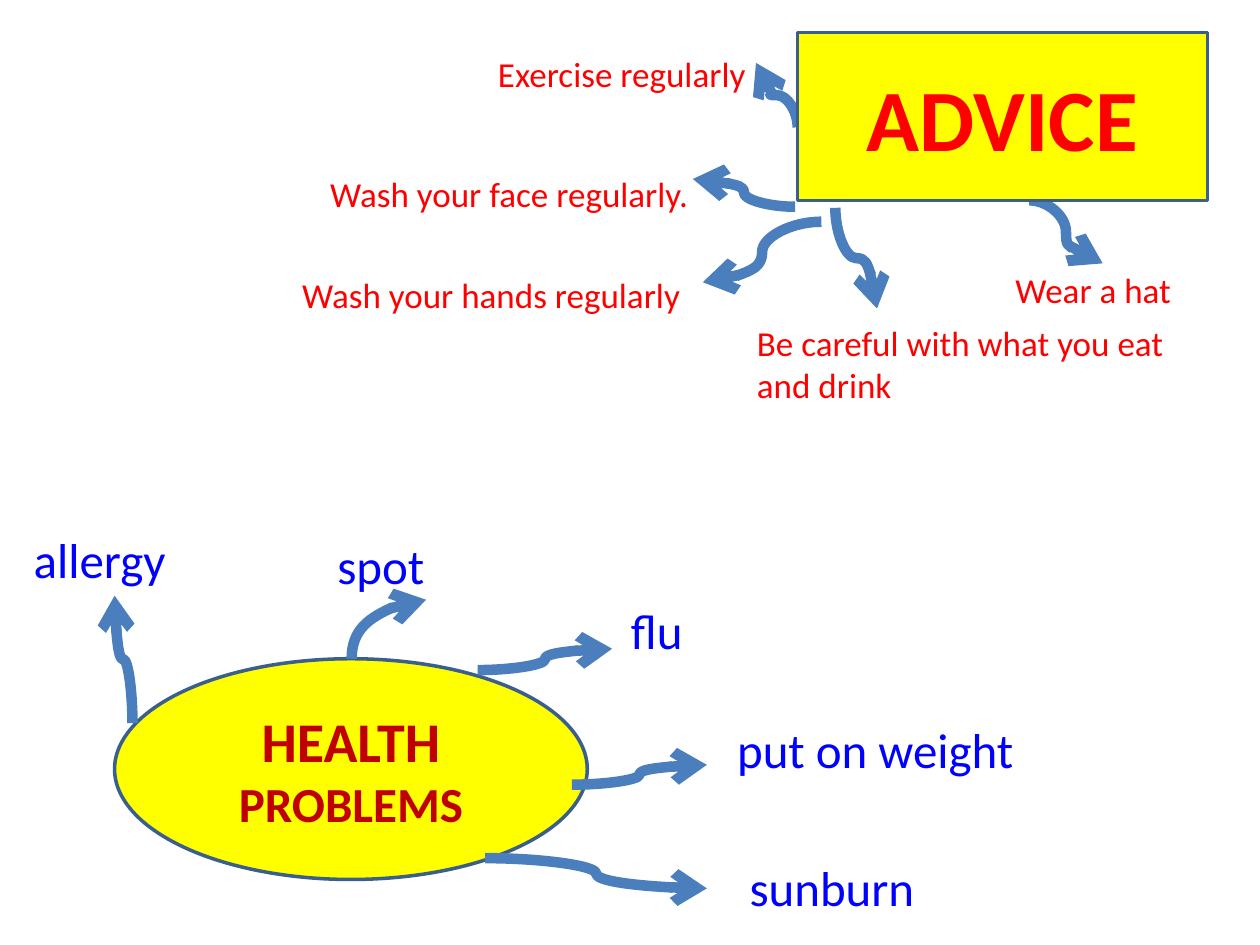
from lxml import etree
from pptx import Presentation
from pptx import util as u
from pptx.dml.color import RGBColor
from pptx.enum import shapes, text
from pptx.oxml.ns import qn


def color(value):
    return RGBColor.from_string(value)


def add_arrow(page, x1, y1, x2, y2, course):
    if course != "across":
        mid_x, mid_y = (x1 + x2) / 2, (y1 + y2) / 2
        half_x, half_y = (x2 - x1) / 2, (y2 - y1) / 2
        x1, x2 = mid_x + half_y, mid_x - half_y
        y1, y2 = mid_y - half_x, mid_y + half_x
    arrow = page.shapes.add_connector(
        shapes.MSO_CONNECTOR.CURVE, u.Cm(x1), u.Cm(y1), u.Cm(x2), u.Cm(y2))
    arrow.line.color.rgb = color("4B7EBC")
    arrow.line.width = u.Pt(6)
    properties = arrow.element.spPr
    if course != "across":
        properties.find(qn("a:xfrm")).set("rot", str(270 * 60000))
    if course == "corner":
        properties.find(qn("a:prstGeom")).set("prst", "curvedConnector2")
    etree.SubElement(properties.find(qn("a:ln")), qn("a:tailEnd"), type="arrow")
    etree.SubElement(properties, qn("a:effectLst"))


deck = Presentation()
deck.slide_width, deck.slide_height = u.Cm(25.4), u.Cm(19.05)
page = deck.slides.add_slide(deck.slide_layouts[6])

advice_arrows = [
    (20.75, 4.04, 22.23, 5.31, "across"),
    (16.08, 2.57, 15.24, 1.27, "upright"),
    (16.03, 4.17, 13.97, 3.61, "across"),
    (16.56, 4.47, 14.17, 5.69, "across"),
    (16.84, 4.19, 17.68, 6.22, "upright"),
]
for arrow in advice_arrows:
    add_arrow(page, *arrow)

topics = [
    (shapes.MSO_SHAPE.RECTANGLE, 16.08, 0.66, 8.26, 3.38, "FF0000", [("ADVICE", 50)]),
    (shapes.MSO_SHAPE.OVAL, 2.31, 13.28, 9.53, 4.45, "C00000",
     [("HEALTH ", 32), ("PROBLEMS", 28)]),
]
for kind, left, top, width, height, ink, words in topics:
    topic = page.shapes.add_shape(kind, u.Cm(left), u.Cm(top), u.Cm(width), u.Cm(height))
    topic.shadow.inherit = False
    topic.fill.solid()
    topic.fill.fore_color.rgb = color("FFFF00")
    topic.line.color.rgb = color("3A5F8C")
    topic.line.width = u.Pt(2)
    topic.text_frame.word_wrap = True
    topic.text_frame.vertical_anchor = text.MSO_ANCHOR.MIDDLE
    para = topic.text_frame.paragraphs[0]
    para.alignment = text.PP_ALIGN.CENTER
    for word, size in words:
        span = para.add_run()
        span.text = word
        span.font.name = "Calibri"
        span.font.size = u.Pt(size)
        span.font.bold = True
        span.font.color.rgb = color(ink)

left_side, centre = text.PP_ALIGN.LEFT, text.PP_ALIGN.CENTER
advice = [
    ("Wear a hat", 20.22, 5.28, 3.68, 1.12, False, left_side),
    ("Wash your hands regularly", 5.84, 5.38, 8.2, 1.12, False, left_side),
    ("Be careful with what you eat and drink", 15.01, 6.35, 8.89, 1.96, True, left_side),
    ("Exercise regularly", 9.79, 0.94, 7.9, 1.12, True, left_side),
    ("Wash your face regularly.", 5.92, 3.35, 8.69, 1.12, True, centre),
]
problems = [
    ("allergy", 0.43, 10.54, 4.8, 1.45, True, left_side),
    ("put on weight", 14.61, 14.38, 7.37, 1.45, True, left_side),
    ("flu", 12.47, 11.99, 4.8, 1.45, True, left_side),
    ("spot", 6.55, 10.67, 4.8, 1.45, True, left_side),
    ("sunburn", 14.86, 17.17, 4.8, 1.45, True, left_side),
]
for labels, size, ink in [(advice, 20, "FF0000"), (problems, 28, "0000FF")]:
    for label, left, top, width, height, wrap, alignment in labels:
        box = page.shapes.add_textbox(u.Cm(left), u.Cm(top), u.Cm(width), u.Cm(height))
        box.text_frame.word_wrap = wrap
        box.text_frame.auto_size = text.MSO_AUTO_SIZE.SHAPE_TO_FIT_TEXT
        para = box.text_frame.paragraphs[0]
        para.text = label
        para.alignment = alignment
        span = para.runs[0]
        span.font.name = "Calibri"
        span.font.size = u.Pt(size)
        span.font.color.rgb = color(ink)

problem_arrows = [
    (2.67, 14.58, 2.31, 12.01, "upright"),
    (7.09, 13.28, 8.59, 12.09, "corner"),
    (9.63, 13.51, 12.34, 13.08, "across"),
    (9.78, 17.3, 14.25, 17.91, "across"),
    (11.53, 15.82, 14.25, 15.42, "across"),
]
for arrow in problem_arrows:
    add_arrow(page, *arrow)

deck.save("out.pptx")
